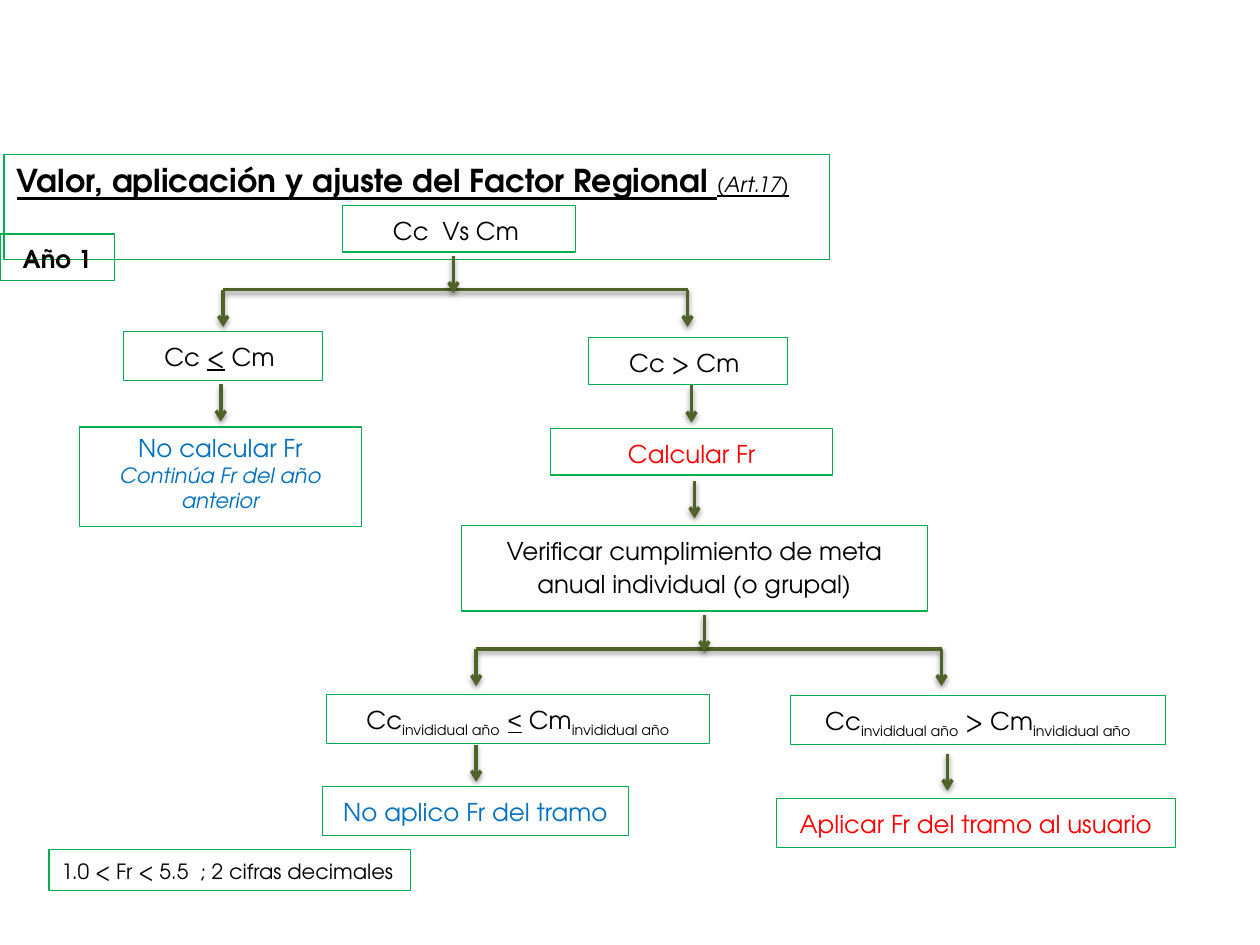
from lxml.etree import SubElement
from pptx import Presentation
from pptx.dml.color import RGBColor
from pptx.enum.shapes import MSO_CONNECTOR as CONNECTOR
from pptx.enum.text import MSO_ANCHOR as ANCHOR, MSO_AUTO_SIZE as AUTO_SIZE, PP_ALIGN as ALIGN
from pptx.oxml.ns import qn
from pptx.util import Cm, Pt

FONT = "TeX Gyre Adventor"
BLACK, BLUE, RED = "000000", "0070C0", "FF0000"
BORDER, FLOW = "00B050", "4F6228"
ARROW_LENGTH = 0.75
UNDERLINED = {"underline": True}
SUBSCRIPT = {"baseline": "-25000"}


def rgb(value):
    return RGBColor.from_string(value)


def write(paragraph, parts, color=BLACK, size=14, align=ALIGN.CENTER, spacing=1.14, **style):
    paragraph.alignment = align
    paragraph.line_spacing = spacing
    font = paragraph.font
    font.name, font.color.rgb = FONT, rgb(color)
    if size:
        font.size = Pt(size)
    for key, value in style.items():
        setattr(font, key, value)
    for text, changes in parts:
        run = paragraph.add_run()
        run.text = text
        for key, value in changes.items():
            if key == "baseline":
                run.font._element.set(key, value)
            else:
                setattr(run.font, key, value)


def frame(box):
    box.line.color.rgb = rgb(BORDER)
    box.line.width = Pt(0.75)
    text = box.text_frame
    text.word_wrap = True
    text.auto_size = AUTO_SIZE.SHAPE_TO_FIT_TEXT
    text.vertical_anchor = ANCHOR.TOP
    return text


def add_box(slide, place, parts, **style):
    box = slide.shapes.add_textbox(*map(Cm, place))
    text = frame(box)
    if isinstance(parts, str):
        parts = [(parts, {})]
    write(text.paragraphs[0], parts, **style)
    return text


def add_heading(slide):
    heading = slide.shapes.title
    heading.left, heading.top, heading.width, heading.height = map(Cm, (0.08, 3.12, 16.64, 1.02))
    write(frame(heading).paragraphs[0],
          [("Valor, aplicación y ajuste del Factor Regional ", {"size": Pt(18), "bold": True}),
           ("(Art.17)", {"size": Pt(12), "italic": True})],
          size=None, align=ALIGN.JUSTIFY, spacing=1.0, underline=True)


def add_flow(slide, x1, y1, x2, y2, arrow=False):
    flow = slide.shapes.add_connector(CONNECTOR.STRAIGHT, Cm(x1), Cm(y1), Cm(x2), Cm(y2))
    flow.line.color.rgb = rgb(FLOW)
    flow.line.width = Pt(2)
    if arrow:
        SubElement(flow.line._get_or_add_ln(), qn("a:tailEnd"), type="arrow")
    effects = SubElement(flow._element.spPr, qn("a:effectLst"))
    shadow = SubElement(effects, qn("a:outerShdw"), blurRad=str(Pt(3.1)), dist=str(Pt(1.6)),
                        dir="5400000", rotWithShape="0")
    shade = SubElement(shadow, qn("a:srgbClr"), val=BLACK)
    SubElement(shade, qn("a:alpha"), val="38000")


def add_arrow(slide, x, y):
    add_flow(slide, x, y, x, y + ARROW_LENGTH, arrow=True)


def add_fork(slide, left, right, y):
    add_flow(slide, left, y, right, y)
    for x in (left, right):
        add_arrow(slide, x, y)


def add_first_year(slide):
    add_box(slide, (0, 4.72, 2.31, 0.94), "Año 1", bold=True)
    add_box(slide, (6.91, 4.14, 4.7, 0.94), "Cc  Vs Cm ")
    add_box(slide, (2.49, 6.68, 4.01, 0.99), [("Cc ", {}), ("<", UNDERLINED), (" Cm ", {})])
    add_box(slide, (11.86, 6.81, 4.01, 0.94), "Cc > Cm ")
    unchanged = add_box(slide, (1.6, 8.61, 5.69, 2.01), "No calcular Fr", color=BLUE, spacing=1.0)
    write(unchanged.add_paragraph(), [("Continúa Fr del año anterior", {})],
          color=BLUE, size=12, spacing=1.0, italic=True)
    add_box(slide, (11.1, 8.64, 5.69, 0.94), "Calcular Fr", color=RED)
    add_box(slide, (0.99, 17.12, 7.29, 0.84), "1.0 < Fr < 5.5  ; 2 cifras decimales",
            size=12, align=ALIGN.JUSTIFY)


def add_individual_goal(slide):
    add_box(slide, (9.3, 10.59, 9.4, 1.73),
            "Verificar cumplimiento de meta anual individual (o grupal)")
    add_box(slide, (6.58, 14, 7.72, 0.99),
            [("Cc", {}), ("invididual año  ", SUBSCRIPT), ("<", {"name": "Arial", **UNDERLINED}),
             (" Cm", {}), ("invididual año", SUBSCRIPT)])
    add_box(slide, (15.93, 14.02, 7.57, 0.99),
            [("Cc", {}), ("invididual año", SUBSCRIPT), (" > Cm", {}),
             ("invididual año", SUBSCRIPT)])
    add_box(slide, (6.5, 15.85, 6.17, 0.99), "No aplico Fr del tramo", color=BLUE)
    add_box(slide, (15.65, 16.1, 8.05, 0.99), "Aplicar Fr del tramo al usuario", color=RED)


def main():
    deck = Presentation()
    deck.slide_width, deck.slide_height = Cm(25.4), Cm(19.05)
    slide = deck.slides.add_slide(deck.slide_layouts[5])
    add_heading(slide)
    add_first_year(slide)
    add_individual_goal(slide)
    add_fork(slide, 4.5, 13.86, 5.84)
    add_fork(slide, 9.6, 18.98, 13.08)
    for x, y in [(9.14, 5.16), (4.45, 7.75), (13.94, 7.77), (14, 9.7),
                 (14.2, 12.4), (9.6, 15.01), (19.1, 15.19)]:
        add_arrow(slide, x, y)
    deck.save("out.pptx")


if __name__ == "__main__":
    main()
